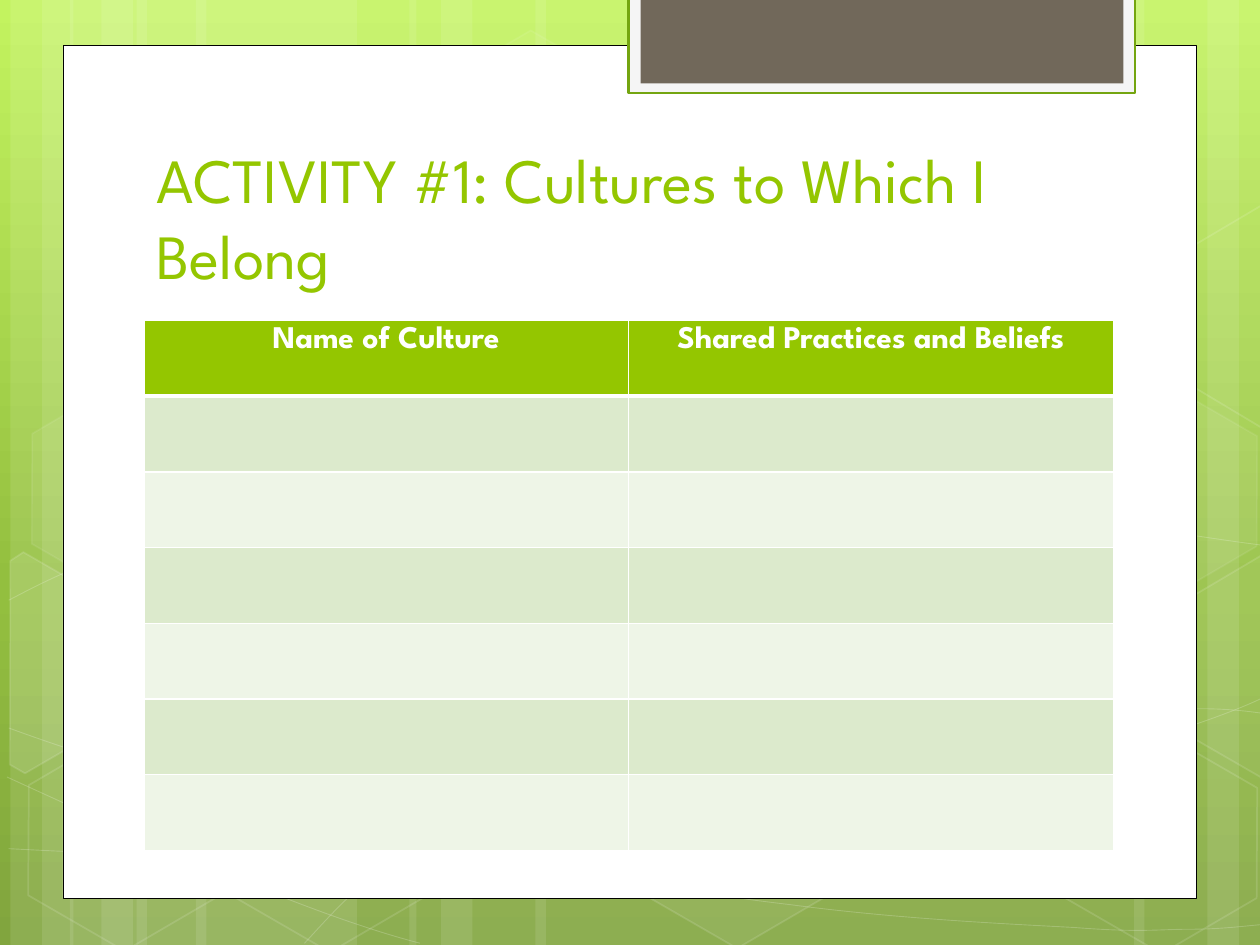
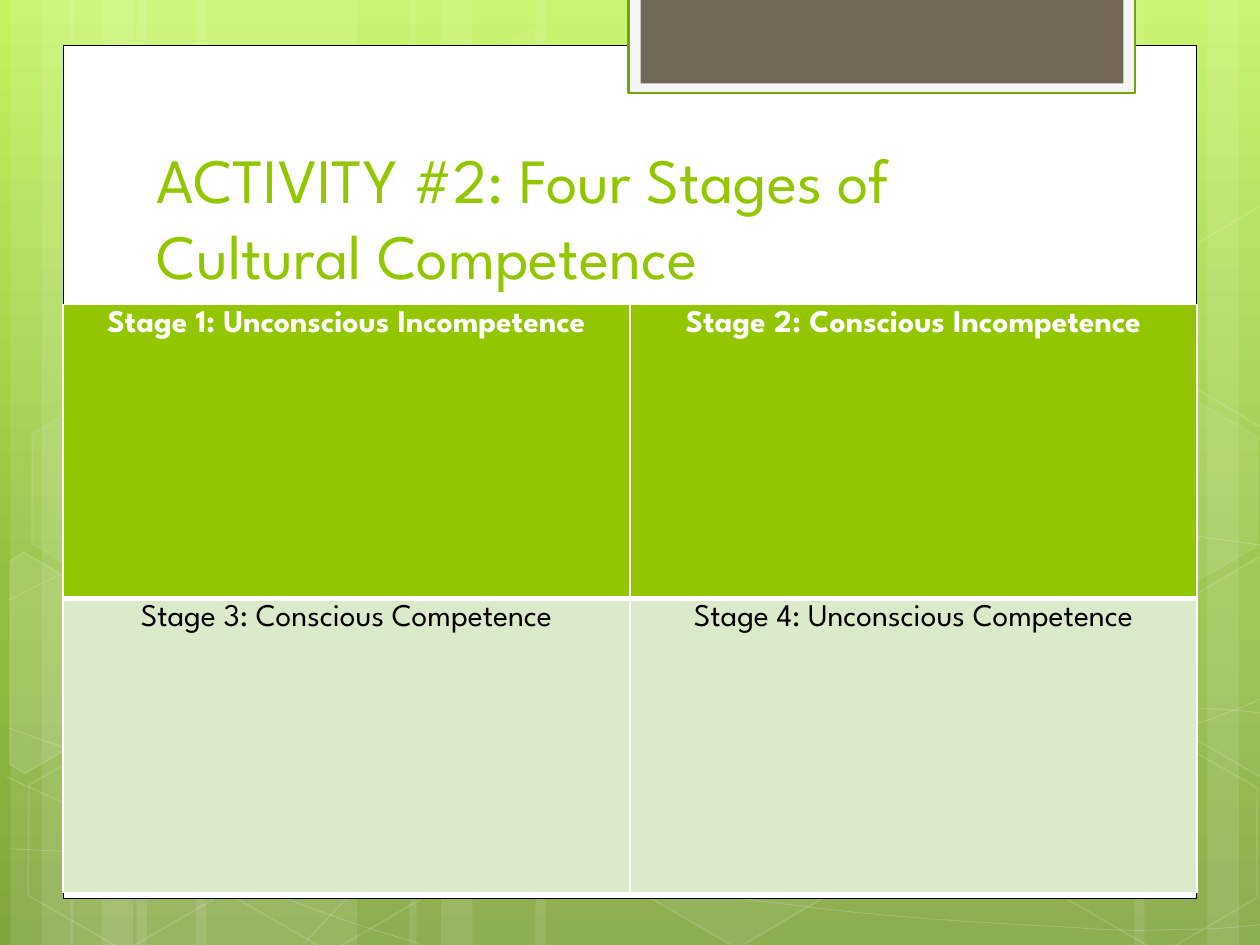
import math
from collections import namedtuple

from lxml import etree
from pptx import Presentation
from pptx.dml.color import RGBColor
from pptx.enum import shapes, text
from pptx.oxml.ns import qn
from pptx.util import Pt

WHITE = RGBColor(0xFF, 0xFF, 0xFF)
BLACK = RGBColor(0x00, 0x00, 0x00)
GREEN = RGBColor(0x94, 0xC6, 0x00)
PALE_GREEN = RGBColor(0xDC, 0xEA, 0xCC)
PALEST_GREEN = RGBColor(0xEE, 0xF5, 0xE7)
TAB_EDGE = RGBColor(0x74, 0xA5, 0x10)
TAB_RIM = RGBColor(0xF5, 0xF5, 0xF5)
TAUPE = RGBColor(0x71, 0x68, 0x5A)
SKY = [
    (0, RGBColor(0xC3, 0xF3, 0x5F)),
    (62, RGBColor(0x93, 0xBF, 0x3F)),
    (100, RGBColor(0x81, 0xA5, 0x3E)),
]
FONT = "League Spartan"
TILT = 30

Box = namedtuple("Box", "left top width height")
PAGE = Box(0, 0, 720, 540)
CARD = Box(36, 26, 648, 487.2)
TITLE = Box(82.2, 80.6, 553, 90)

BANDS = [
    (78, 126), (6, 36), (24, 60), (112, 126), (40, 36), (58, 60),
    (528, 126), (690, 36), (648, 60), (306, 222), (234, 36), (252, 60),
]
WAVES = [
    [(5, 484.6), (44, 487), (83, 489), (137, 488), (191, 487), (258, 486), (330, 479),
     (402, 472), (504, 458), (570, 444), (636, 431), (703, 409), (725, 397)],
    [(5, 343.4), (26, 332), (47, 321), (87, 310), (128, 300), (186, 284), (250, 279),
     (314, 274), (392, 273), (471, 279), (550, 284), (682, 307), (725, 312.5)],
    [(4, 444), (91, 484), (178, 523), (240.5, 539)],
    [(5, 416), (27, 424), (50, 432), (92, 443.5), (134, 454), (197, 472), (257, 484.6),
     (317, 497), (392, 510), (452, 517), (512, 525), (576, 528), (614, 530),
     (652, 533), (662, 531), (680, 531), (699, 531), (712, 529), (725, 528.5)],
    [(174, 539), (187, 525), (200, 510), (217, 497.5), (235, 485), (259, 470), (279, 460),
     (300, 450), (312, 446), (338, 438.5), (364, 431), (413, 421), (438, 416),
     (464, 411), (467, 411), (490, 409.7), (512, 407), (547, 405), (572, 404.6),
     (597, 404), (638, 404.6), (638, 404.6), (654, 404.6), (670, 404.6), (686, 404.6),
     (699, 405), (711, 406), (724, 407.5)],
]
HEXAGONS = [
    (240.5, 26, 4, 8), (358, 424, 6, 12), (8, 425.5, 0, 12), (10, 224.6, 7, 8),
    (125.3, 426.2, 0, 12), (542, 326, 10, 12), (600.5, 427, 0, 12), (600.5, 226, 7, 8),
]
CUT_HEXAGONS = [
    ((25.9, 385.2), 10, [(5.8, 320.4), (13.7, 315.4), (69.1, 347),
                         (68.4, 410.4), (14.4, 442), (5.8, 437)]),
    ((709.2, 374.4), 4, [(666.7, 349.2), (720.7, 317.5), (726.5, 321.1),
                         (726.5, 441.4), (721.4, 444.2), (666.7, 412.6)]),
    ((709.2, 173.5), 0, [(666.7, 149), (720.7, 117.4), (727.2, 121),
                         (726.5, 241.2), (721.4, 244.1), (666.7, 212.4)]),
]


def fade(solid_fill, percent):
    """Set the opacity of a solid fill element."""
    etree.SubElement(solid_fill[0], qn("a:alpha"), val=str(percent * 1000))


def paint(shape, fill=None, line=None, width=1, fill_opacity=100, line_opacity=100):
    """Give a shape its fill and outline, with no shadow."""
    shape.shadow.inherit = False
    properties = shape.element.spPr
    if fill is None:
        shape.fill.background()
    else:
        shape.fill.solid()
        shape.fill.fore_color.rgb = fill
        if fill_opacity < 100:
            fade(properties.find(qn("a:solidFill")), fill_opacity)
    if line is None:
        shape.line.fill.background()
    else:
        shape.line.color.rgb = line
        shape.line.width = Pt(width)
        if line_opacity < 100:
            fade(properties.find(qn("a:ln")).find(qn("a:solidFill")), line_opacity)


def add_preset(slide, kind, box, **look):
    """Add a preset shape in a box and paint it."""
    shape = slide.shapes.add_shape(kind, *map(Pt, box))
    paint(shape, **look)
    return shape


def add_outline(slide, box, points, close, **look):
    """Add a freeform through points measured from the corner of a box."""
    placed = [(box.left + x, box.top + y) for x, y in points]
    builder = slide.shapes.build_freeform(*placed[0], scale=Pt(1))
    builder.add_line_segments(placed[1:], close=close)
    outline = builder.convert_to_shape()
    paint(outline, **look)
    return outline


def bend(outline):
    """Turn each three line segments of a freeform into one cubic curve."""
    route = next(outline.element.iter(qn("a:path")))
    segments = list(route)[1:]
    for start in range(0, len(segments), 3):
        curve = etree.SubElement(route, qn("a:cubicBezTo"))
        for segment in segments[start:start + 3]:
            curve.append(segment[0])
            route.remove(segment)


def turn_back(points, center):
    """Rotate points about a center against the tilt of the hexagons."""
    cos, sin = math.cos(math.radians(TILT)), math.sin(math.radians(TILT))
    offsets = [(x - center[0], y - center[1]) for x, y in points]
    return [(center[0] + x * cos + y * sin, center[1] - x * sin + y * cos)
            for x, y in offsets]


def write_text(frame, words, size, color, bold=False, align=text.PP_ALIGN.LEFT):
    """Write one formatted paragraph into a text frame."""
    paragraph = frame.paragraphs[0]
    paragraph.alignment = align
    run = paragraph.add_run()
    run.text = words
    run.font.name = FONT
    run.font.size = Pt(size)
    run.font.bold = bold
    run.font.color.rgb = color


def fill_sky(layout):
    """Fill the background with the vertical green gradient."""
    sky = layout.background.fill
    sky.gradient()
    sky.gradient_angle = 270
    stops = next(layout.element.iter(qn("a:gsLst")))
    for stop in list(stops):
        stops.remove(stop)
    for position, color in SKY:
        stop = etree.SubElement(stops, qn("a:gs"), pos=str(position * 1000))
        etree.SubElement(stop, qn("a:srgbClr"), val=str(color))


def draw_backdrop(slide, box):
    """Draw the translucent bands, waves and hexagons."""
    for left, width in BANDS:
        add_preset(slide, shapes.MSO_SHAPE.RECTANGLE,
                   (box.left + left, box.top, width, box.height),
                   fill=WHITE, fill_opacity=10)
    for points in WAVES:
        bend(add_outline(slide, box, points, False,
                         line=WHITE, width=0.5, line_opacity=20))
    for left, top, opacity, edge in HEXAGONS:
        hexagon = add_preset(slide, shapes.MSO_SHAPE.HEXAGON,
                             (box.left + left, box.top + top, 126, 109.4),
                             fill=WHITE if opacity else None, fill_opacity=opacity,
                             line=WHITE, line_opacity=edge)
        hexagon.adjustments[0] = 0.285
        hexagon.rotation = TILT
    for center, opacity, corners in CUT_HEXAGONS:
        cut = add_outline(slide, box, turn_back(corners, center), True,
                          fill=WHITE if opacity else None, fill_opacity=opacity,
                          line=WHITE, line_opacity=12)
        cut.rotation = TILT


def draw_card(slide, box):
    """Draw the white card and the tab hanging over its top edge."""
    rectangle = shapes.MSO_SHAPE.RECTANGLE
    add_preset(slide, rectangle, box, fill=WHITE, line=BLACK, width=0.5)
    tab = Box(box.left + 323.2, box.top - 27.4, 289.6, 54.8)
    add_preset(slide, rectangle, tab, fill=TAB_RIM, line=TAB_EDGE, width=1.25)
    add_preset(slide, rectangle, (tab.left + 6.8, tab.top, 276, 49), fill=TAUPE)


def share_scenery(layout, slide):
    """Draw the scenery through a slide and hand it over to the layout."""
    for holder in list(layout.placeholders):
        if holder.placeholder_format.type != shapes.PP_PLACEHOLDER.TITLE:
            layout.shapes.element.remove(holder.element)
    fill_sky(layout)
    draw_backdrop(slide, PAGE)
    draw_card(slide, CARD)
    for part in list(slide.shapes):
        if not part.is_placeholder:
            layout.shapes.element.append(part.element)


def place_title(slide, box, words):
    """Move the title placeholder to its box and write it."""
    title = slide.shapes.title
    title.left, title.top, title.width, title.height = map(Pt, box)
    frame = title.text_frame
    frame.auto_size = text.MSO_AUTO_SIZE.NONE
    frame.word_wrap = True
    frame.vertical_anchor = text.MSO_ANCHOR.BOTTOM
    write_text(frame, words, size=36, color=GREEN)


def border_cell(cell, top, bottom):
    """Draw white borders around a table cell."""
    properties = cell._tc.get_or_add_tcPr()
    for side, width in (("L", 1), ("R", 1), ("T", top), ("B", bottom)):
        edge = etree.SubElement(properties, qn("a:ln" + side), w=str(Pt(width)))
        color = etree.SubElement(edge, qn("a:solidFill"))
        etree.SubElement(color, qn("a:srgbClr"), val=str(WHITE))


def draw_table(slide, box, rows):
    """Draw a table with equal rows and columns and a green first row."""
    table = slide.shapes.add_table(len(rows), len(rows[0]), *map(Pt, box)).table
    for column in table.columns:
        column.width = Pt(box.width / len(rows[0]))
    for index, (row, labels) in enumerate(zip(table.rows, rows)):
        row.height = Pt(box.height / len(rows))
        heading = index == 0
        shade = GREEN if heading else PALE_GREEN if index % 2 else PALEST_GREEN
        for cell, label in zip(row.cells, labels):
            border_cell(cell, top=3 if index == 1 else 1, bottom=3 if heading else 1)
            cell.fill.solid()
            cell.fill.fore_color.rgb = shade
            if label:
                write_text(cell.text_frame, label, size=18, bold=heading,
                           color=WHITE if heading else BLACK,
                           align=text.PP_ALIGN.CENTER)


def fill_activity(slide, title, table_box, rows):
    """Fill one activity slide with its title and table."""
    place_title(slide, TITLE, title)
    draw_table(slide, table_box, rows)


def main():
    """Build both activity slides and save them."""
    deck = Presentation()
    deck.slide_width, deck.slide_height = Pt(PAGE.width), Pt(PAGE.height)
    layout = deck.slide_layouts[5]
    cultures, stages = (deck.slides.add_slide(layout) for _ in range(2))
    share_scenery(layout, cultures)
    fill_activity(
        cultures, "ACTIVITY #1: Cultures to Which I Belong", Box(82.2, 183, 554, 303),
        [("Name of Culture", "Shared Practices and Beliefs")] + [("", "")] * 6)
    fill_activity(
        stages, "ACTIVITY #2: Four Stages of Cultural Competence",
        Box(36, 174, 648, 336),
        [("Stage 1: Unconscious Incompetence", "Stage 2: Conscious Incompetence"),
         ("Stage 3: Conscious Competence", "Stage 4: Unconscious Competence")])
    deck.save("out.pptx")


if __name__ == "__main__":
    main()
